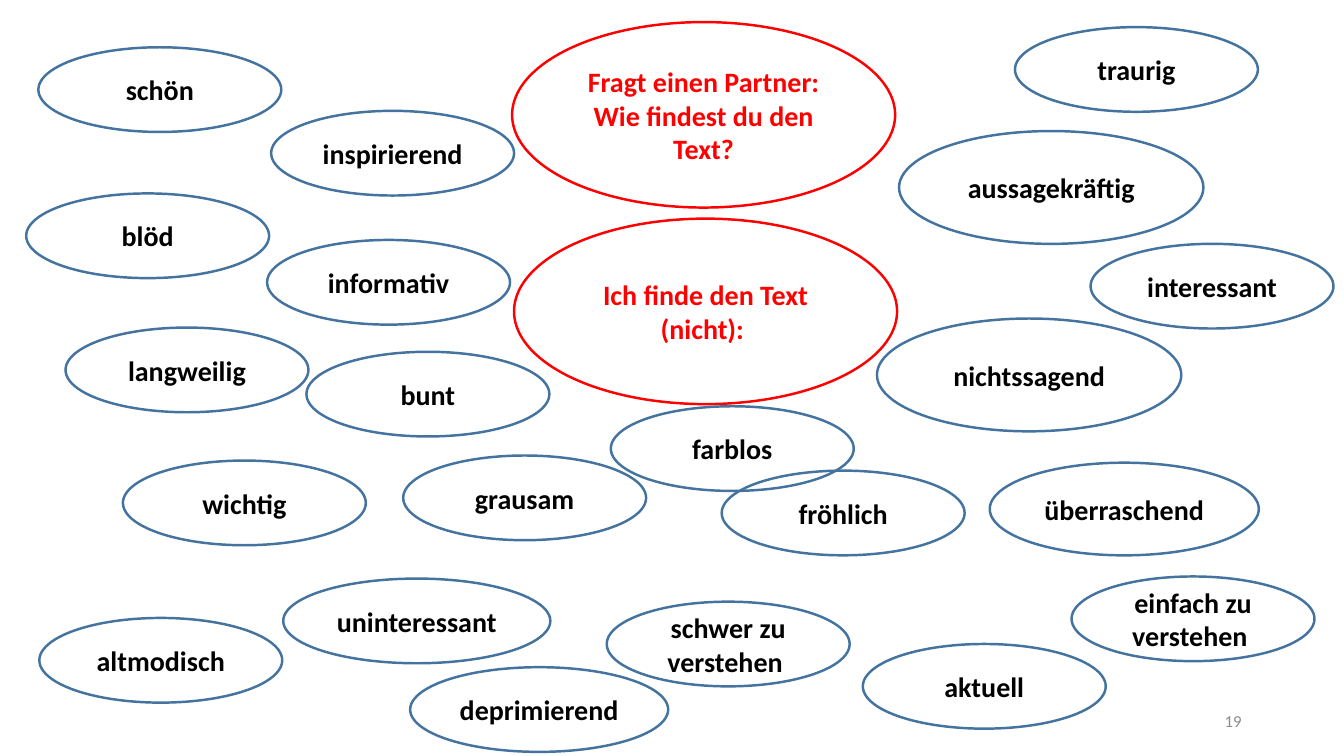
import pptx
import pptx.util
import pptx.dml.color
import pptx.enum.shapes
import pptx.enum.text
from dataclasses import dataclass

Pt = pptx.util.Pt
Align = pptx.enum.text.PP_ALIGN


@dataclass(frozen=True)
class Theme:
    font: str = "Calibri"
    ink: str = "000000"
    red: str = "FF0000"
    blue: str = "43739E"
    gray: str = "8C8C8C"
    body: int = 20
    small: int = 12
    line: float = 1.75


theme = Theme()

PROMPTS = [
    ("Ich finde den Text (nicht): ", 367.2, 156.2),
    ("Fragt einen Partner: Wie findest du den Text?", 365.8, 15.8),
]
WORDS = [
    ("schön", 27.4, 33.8),
    ("inspirierend", 193.7, 79.2),
    ("blöd", 18.7, 138.2),
    ("informativ", 190.8, 171.4),
    ("langweilig", 46.8, 234),
    ("bunt", 218.9, 251.3),
    ("wichtig", 87.8, 329),
    ("grausam", 288, 325.4),
    ("farblos", 436.3, 290.2),
    ("fröhlich", 515.5, 336.2),
    ("altmodisch", 28.1, 441.4),
    ("schwer zu verstehen ", 433.4, 429.8),
    ("aktuell", 616.3, 460),
    ("einfach zu verstehen ", 765.4, 411.8),
    ("interessant", 779, 174.2),
    ("traurig", 725, 19.4),
]
WIDE = [
    ("aussagekräftig", 642.2, 93.6, 217.4, 80.6),
    ("nichtssagend", 626.4, 227.5, 217.4, 80.6),
    ("überraschend", 707, 330.5, 192.2, 66.2),
    ("uninteressant", 202.3, 413.3, 190.8, 60.5),
    ("deprimierend", 293, 476.6, 184.3, 60.5),
]


def color(code):
    return pptx.dml.color.RGBColor.from_string(code)


def write(shape, text, size=theme.body, ink=theme.ink, bold=True, align=Align.CENTER):
    frame = shape.text_frame
    frame.word_wrap = True
    frame.vertical_anchor = pptx.enum.text.MSO_ANCHOR.MIDDLE
    para = frame.paragraphs[0]
    para.alignment = align
    run = para.add_run()
    run.text = text
    font = run.font
    font.name = theme.font
    font.size = Pt(size)
    font.bold = bold
    font.color.rgb = color(ink)


def bubble(slide, text, box, line=theme.blue, ink=theme.ink):
    kind = pptx.enum.shapes.MSO_SHAPE.OVAL
    shape = slide.shapes.add_shape(kind, *map(Pt, box))
    shape.shadow.inherit = False
    shape.fill.background()
    shape.line.color.rgb = color(line)
    shape.line.width = Pt(theme.line)
    write(shape, text, ink=ink)


def cloud(slide, box):
    left, top = box
    for text, x, y in PROMPTS:
        bubble(slide, text, (left + x, top + y, 273.6, 132.5), theme.red, theme.red)
    for text, x, y in WORDS:
        bubble(slide, text, (left + x, top + y, 173.5, 60.5))
    for text, x, y, wide, high in WIDE:
        bubble(slide, text, (left + x, top + y, wide, high))


def footer(slide, box):
    shape = slide.shapes.add_textbox(*map(Pt, box))
    write(shape, "19", size=theme.small, ink=theme.gray, bold=False, align=Align.RIGHT)


def main():
    deck = pptx.Presentation()
    deck.slide_width = Pt(960)
    deck.slide_height = Pt(540)
    slide = deck.slides.add_slide(deck.slide_layouts[6])
    cloud(slide, (0, 0))
    footer(slide, (678, 500.5, 216, 28.8))
    deck.save("out.pptx")


if __name__ == "__main__":
    main()
